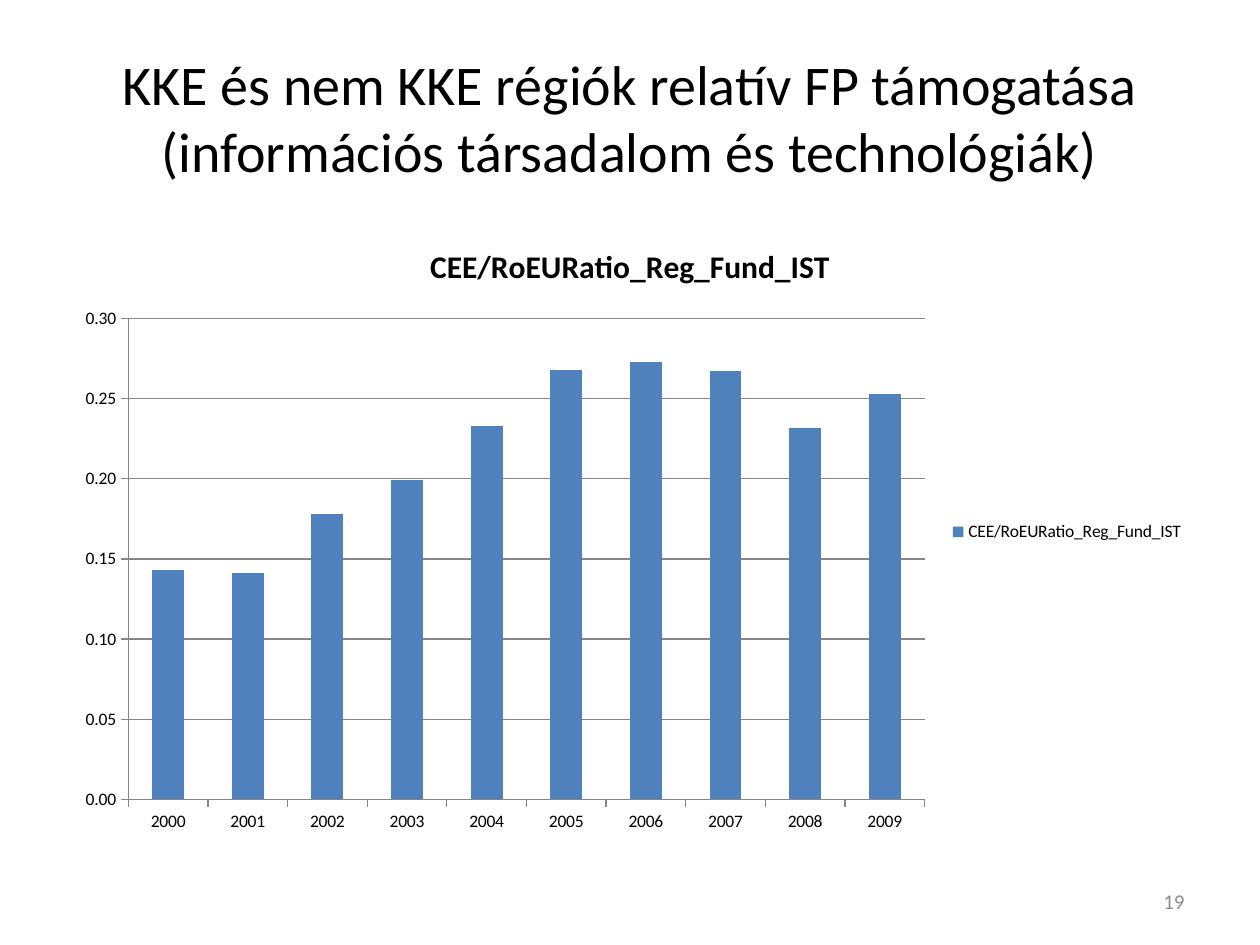
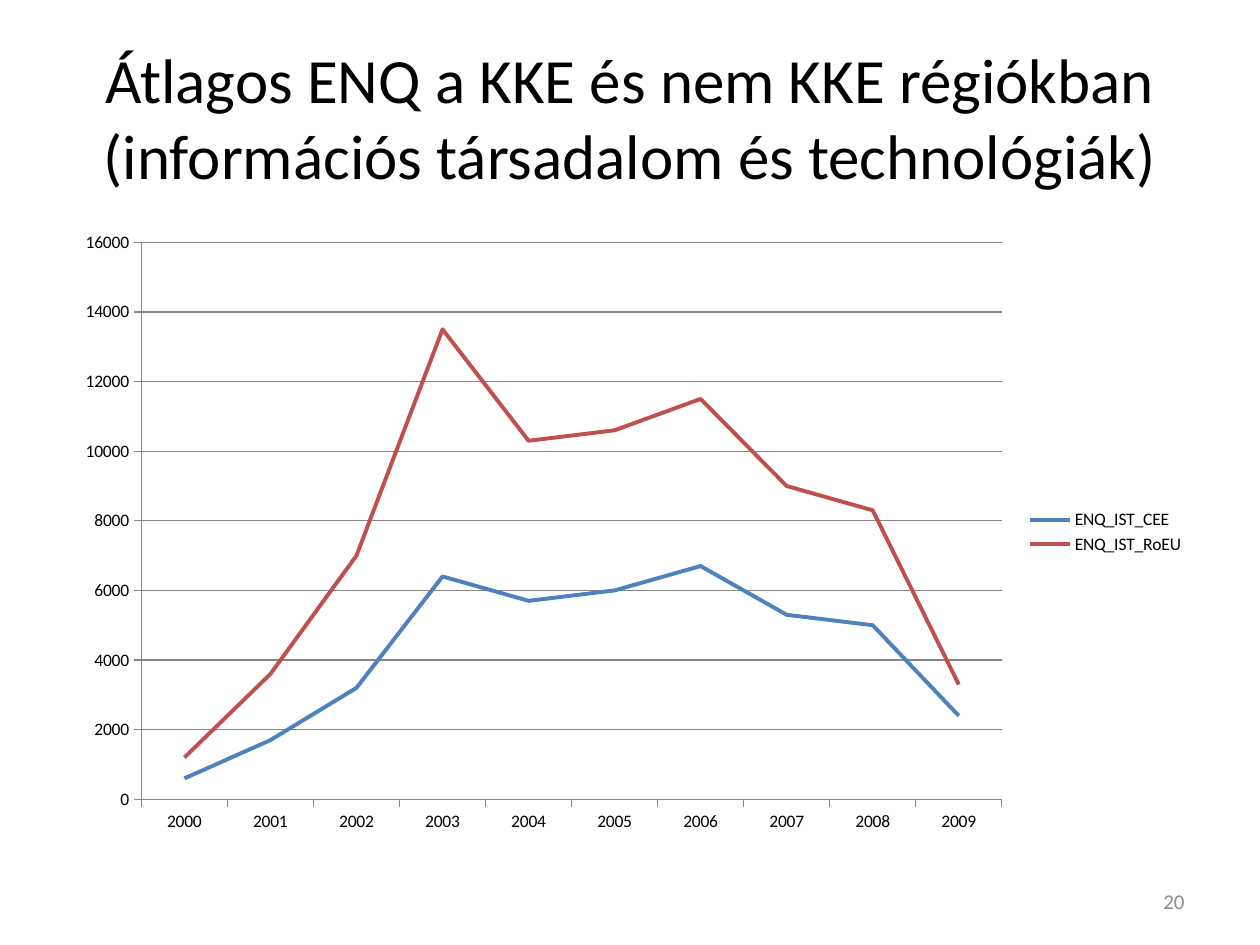
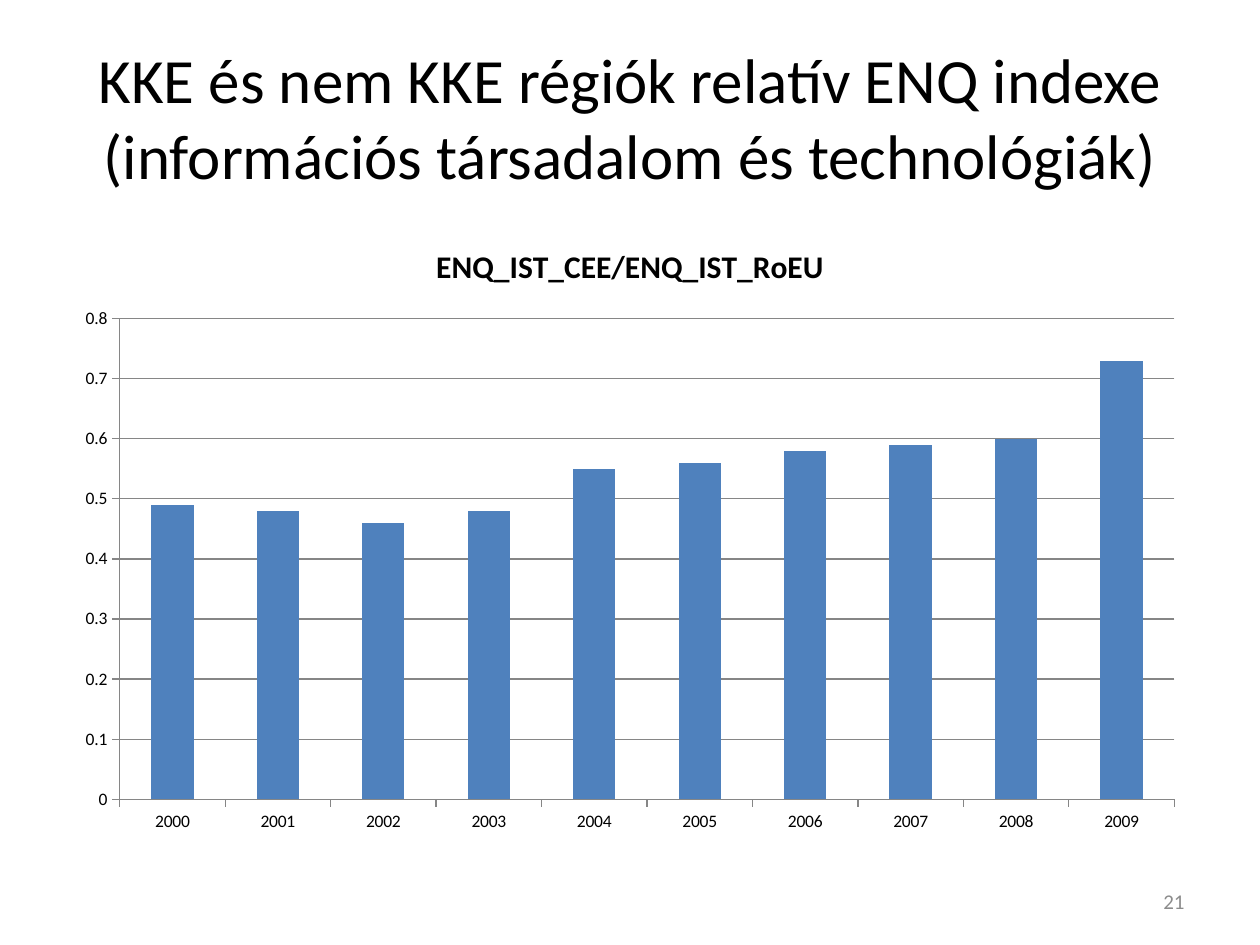
from pptx import Presentation
from pptx.chart.data import CategoryChartData
from pptx.dml.color import RGBColor
from pptx.enum.chart import XL_CHART_TYPE, XL_LEGEND_POSITION, XL_MARKER_STYLE, XL_TICK_MARK
from pptx.enum.text import MSO_ANCHOR, PP_ALIGN
from pptx.util import Emu, Pt

COLUMN = XL_CHART_TYPE.COLUMN_CLUSTERED
LINE = XL_CHART_TYPE.LINE
LEGEND_RIGHT = XL_LEGEND_POSITION.RIGHT
NO_MARKER = XL_MARKER_STYLE.NONE
TICK_OUTSIDE = XL_TICK_MARK.OUTSIDE
MIDDLE = MSO_ANCHOR.MIDDLE
CENTER = PP_ALIGN.CENTER
RIGHT = PP_ALIGN.RIGHT

FONT = "Calibri"
COLORS = {"text": "000000", "number": "8C8C8C", "grid": "868686"}
SERIES_COLORS = ["4F81BD", "C0504D"]
PX_PER_INCH = 126
YEARS = range(2000, 2010)
FIRST_NUMBER = 19

TITLE_AREA = (63, 38, 1134, 157)
CHART_AREA = (63, 220, 1134, 624)
NUMBER_AREA = (903, 876, 294, 50)

PAGES = [
    {
        "title": "KKE és nem KKE régiók relatív FP támogatása "
                 "(információs társadalom és technológiák)",
        "title_size": 32, "type": COLUMN, "heading": "CEE/RoEURatio_Reg_Fund_IST",
        "legend": True, "top": 0.3, "step": 0.05, "format": "0.00",
        "series": {
            "CEE/RoEURatio_Reg_Fund_IST":
                [0.143, 0.141, 0.178, 0.199, 0.233, 0.268, 0.273, 0.267, 0.232, 0.253],
        },
    },
    {
        "title": "Átlagos ENQ a KKE és nem KKE régiókban "
                 "(információs társadalom és technológiák)",
        "title_size": 36, "type": LINE, "heading": None,
        "legend": True, "top": 16000, "step": 2000, "format": "General",
        "series": {
            "ENQ_IST_CEE": [600, 1700, 3200, 6400, 5700, 6000, 6700, 5300, 5000, 2400],
            "ENQ_IST_RoEU": [1200, 3600, 7000, 13500, 10300, 10600, 11500, 9000, 8300, 3300],
        },
    },
    {
        "title": "KKE és nem KKE régiók relatív ENQ indexe "
                 "(információs társadalom és technológiák)",
        "title_size": 36, "type": COLUMN, "heading": "ENQ_IST_CEE/ENQ_IST_RoEU",
        "legend": False, "top": 0.8, "step": 0.1, "format": "General",
        "series": {
            "ENQ_IST_CEE/ENQ_IST_RoEU":
                [0.49, 0.48, 0.46, 0.48, 0.55, 0.56, 0.58, 0.59, 0.6, 0.73],
        },
    },
]


def px(*lengths):
    """Turn px lengths into a list of EMU."""
    return [Emu(length * 914400 // PX_PER_INCH) for length in lengths]


def style(font, size, color, bold=False):
    font.name = FONT
    font.size = Pt(size)
    font.bold = bold
    font.color.rgb = RGBColor.from_string(color)


deck = Presentation()
deck.slide_width, deck.slide_height = px(1260, 945)
title_only = deck.slide_layouts[5]

for number, content in enumerate(PAGES, FIRST_NUMBER):
    page = deck.slides.add_slide(title_only)

    title = page.shapes.title
    title.left, title.top, title.width, title.height = px(*TITLE_AREA)
    title.text_frame.text = content["title"]
    title.text_frame.vertical_anchor = MIDDLE
    para = title.text_frame.paragraphs[0]
    para.alignment = CENTER
    style(para.font, content["title_size"], COLORS["text"])

    data = CategoryChartData()
    data.categories = YEARS
    for name, values in content["series"].items():
        data.add_series(name, values)
    chart = page.shapes.add_chart(content["type"], *px(*CHART_AREA), data).chart
    style(chart.font, 10, COLORS["text"])

    chart.has_title = content["heading"] is not None
    if chart.has_title:
        heading = chart.chart_title
        heading.include_in_layout = False
        heading.text_frame.text = content["heading"]
        style(heading.text_frame.paragraphs[0].font, 18, COLORS["text"], bold=True)

    chart.has_legend = content["legend"]
    if chart.has_legend:
        chart.legend.position = LEGEND_RIGHT
        chart.legend.include_in_layout = False

    value_axis = chart.value_axis
    value_axis.minimum_scale = 0
    value_axis.maximum_scale = content["top"]
    value_axis.major_unit = content["step"]
    value_axis.has_major_gridlines = True
    value_axis.tick_labels.number_format = content["format"]
    value_axis.tick_labels.number_format_is_linked = False
    for axis in (chart.category_axis, value_axis):
        axis.major_tick_mark = TICK_OUTSIDE
    for lines in (chart.category_axis, value_axis, value_axis.major_gridlines):
        lines.format.line.color.rgb = RGBColor.from_string(COLORS["grid"])
        lines.format.line.width = Pt(0.75)

    plot = chart.plots[0]
    plot.vary_by_categories = False
    if content["type"] == COLUMN:
        plot.gap_width = 150
    for series, color in zip(plot.series, SERIES_COLORS):
        if content["type"] == LINE:
            series.smooth = False
            series.marker.style = NO_MARKER
            series.format.line.color.rgb = RGBColor.from_string(color)
            series.format.line.width = Pt(2.25)
        else:
            series.format.fill.solid()
            series.format.fill.fore_color.rgb = RGBColor.from_string(color)

    box = page.shapes.add_textbox(*px(*NUMBER_AREA))
    box.text_frame.word_wrap = True
    box.text_frame.vertical_anchor = MIDDLE
    box.text_frame.text = str(number)
    para = box.text_frame.paragraphs[0]
    para.alignment = RIGHT
    style(para.font, 12, COLORS["number"])

deck.save("out.pptx")
